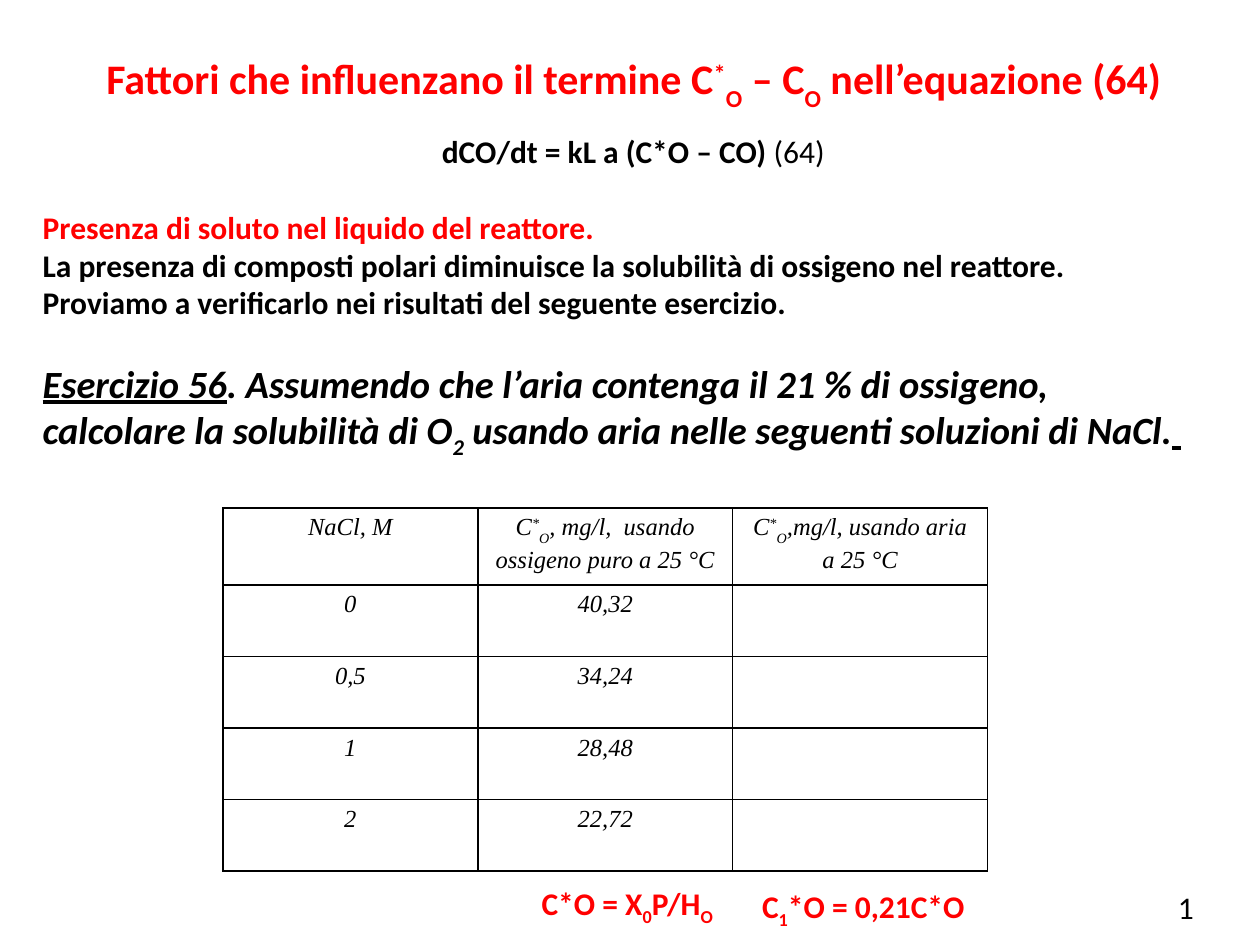
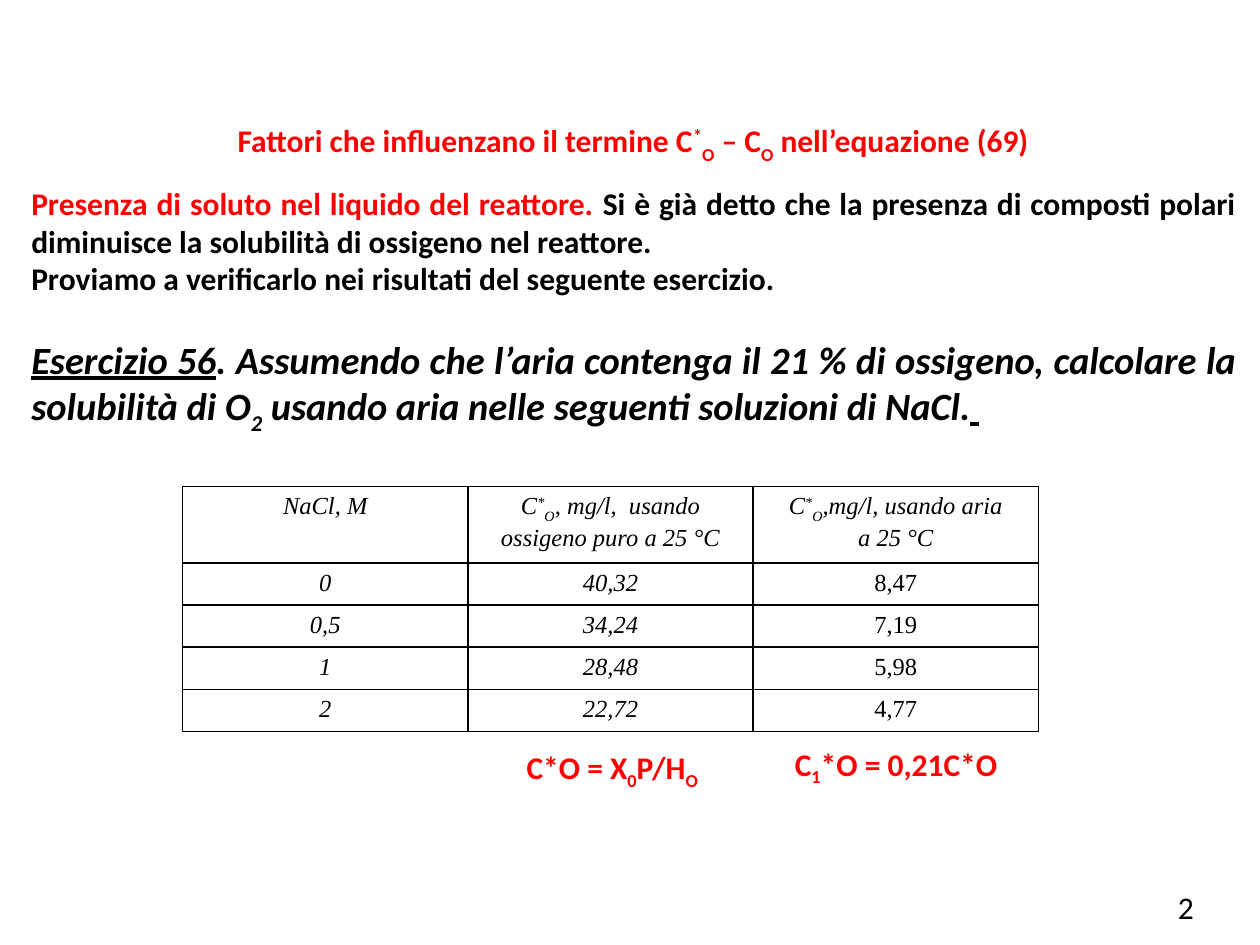
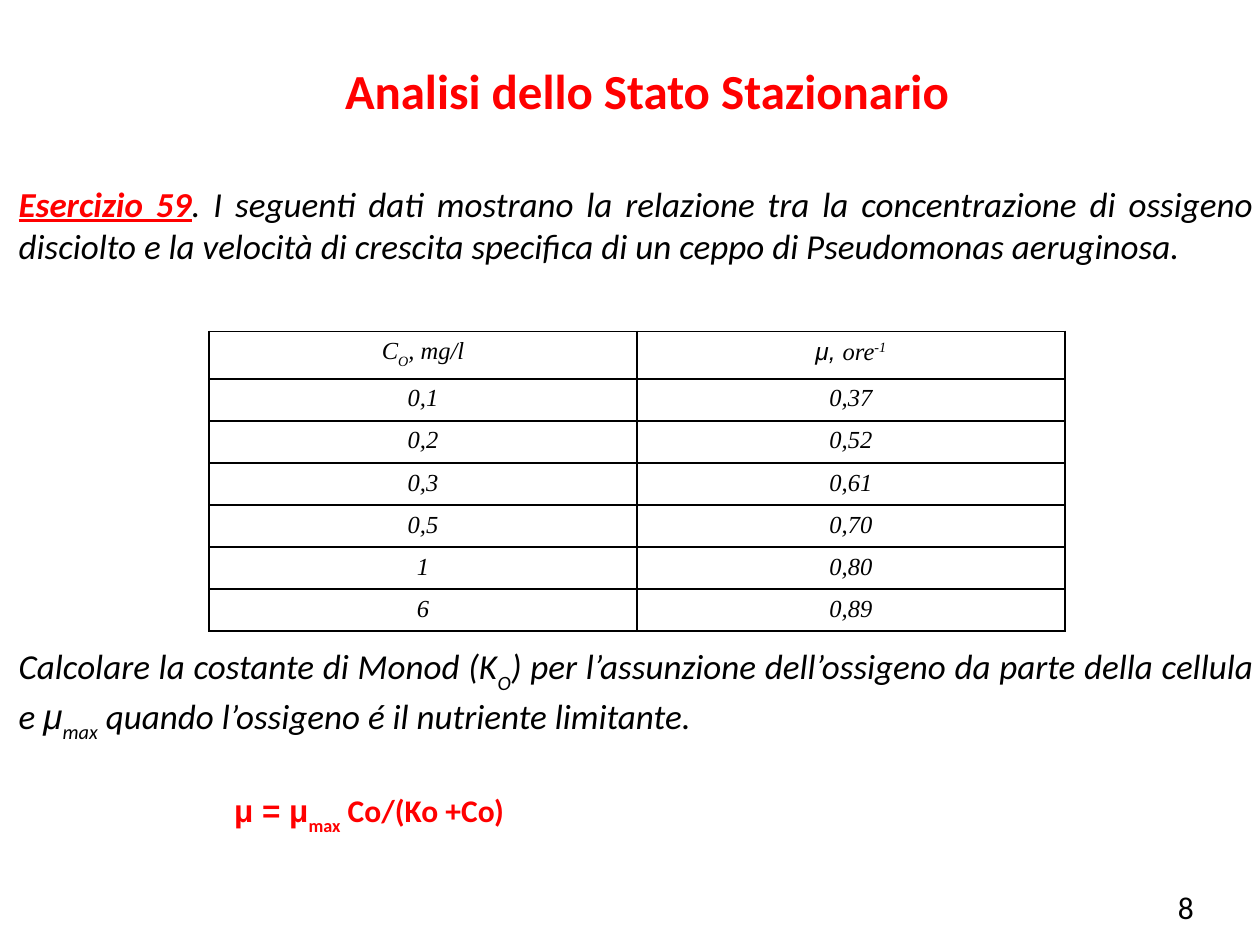
import pptx
import pptx.util
import pptx.dml.color
import pptx.enum.text
import pptx.oxml
import pptx.oxml.ns

Pt = pptx.util.Pt
LEFT = pptx.enum.text.PP_ALIGN.LEFT
CENTER = pptx.enum.text.PP_ALIGN.CENTER
JUSTIFY = pptx.enum.text.PP_ALIGN.JUSTIFY
COLORS = {"text": "000000", "accent": "FF0000", "border": "000000"}
BODY = dict(font="Calibri", size=18, color="text", bold=False, italic=False,
            underline=False, baseline=0)
ACCENT = dict(color="accent", bold=True)
CELL = dict(font="Times New Roman", size=14, italic=True)


def span(text, **style):
    return text, style


def sub(text, depth=30, **style):
    return span(text, baseline=-depth, **style)


def sup(text):
    return span(text, baseline=30)


def as_spans(line):
    """Accept a plain string, one span, or a list of both."""
    parts = line if isinstance(line, list) else [line]
    return [span(part) if isinstance(part, str) else part for part in parts]


class Lesson:
    def __init__(self):
        self.deck = pptx.Presentation()
        self.deck.slide_width, self.deck.slide_height = Pt(720), Pt(540)
        self.page = None

    def new_page(self, number):
        self.page = self.deck.slides.add_slide(self.deck.slide_layouts[6])
        self.text(666, 504, 38, 36, [str(number)])

    def fill_frame(self, frame, lines, align=LEFT, before=None, **style):
        """Fill a frame; before maps a line's index to the space above it."""
        for index, line in enumerate(lines):
            para = frame.paragraphs[0] if index == 0 else frame.add_paragraph()
            para.alignment = align
            para.space_before = Pt((before or {}).get(index, 0))
            for words, own_style in as_spans(line):
                self.add_run(para, words, **{**BODY, **style, **own_style})

    def add_run(self, para, words, font, size, color, bold, italic, underline,
                baseline):
        run = para.add_run()
        run.text = words
        run.font.name, run.font.size = font, Pt(size)
        run.font.bold, run.font.italic = bold, italic
        run.font.underline = underline
        run.font.color.rgb = pptx.dml.color.RGBColor.from_string(COLORS[color])
        if baseline:
            run.font._element.set("baseline", str(baseline * 1000))

    def text(self, left, top, width, height, lines, **style):
        box = self.page.shapes.add_textbox(Pt(left), Pt(top), Pt(width), Pt(height))
        box.text_frame.word_wrap = True
        self.fill_frame(box.text_frame, lines, **style)

    def title(self, left, top, width, line, size):
        self.text(left, top, width, 36, [line], align=CENTER, size=size, **ACCENT)

    def formula(self, left, top, line, width=132.5):
        self.text(left, top, width, 29, [line], **ACCENT)

    def table(self, left, top, width, header_height, row_height, rows):
        """Each cell is a list of lines; an empty list leaves it blank."""
        heights = [header_height] + [row_height] * (len(rows) - 1)
        grid = self.page.shapes.add_table(
            len(rows), len(rows[0]), Pt(left), Pt(top), Pt(width), Pt(sum(heights))).table
        grid.first_row = grid.horz_banding = False
        for column in grid.columns:
            column.width = Pt(width / len(rows[0]))
        for row, height, cells in zip(grid.rows, heights, rows):
            row.height = Pt(height)
            for cell, lines in zip(row.cells, cells):
                self.fill_frame(cell.text_frame, lines, align=CENTER, **CELL)
                self.outline(cell)
                cell.fill.background()

    def outline(self, cell):
        properties = cell._tc.get_or_add_tcPr()
        for side in ("lnL", "lnR", "lnT", "lnB"):
            properties.append(pptx.oxml.parse_xml(
                f'<a:{side} {pptx.oxml.ns.nsdecls("a")} w="{Pt(1)}"><a:solidFill>'
                f'<a:srgbClr val="{COLORS["border"]}"/></a:solidFill></a:{side}>'))


SOLUTE = "Presenza di soluto nel liquido del reattore."
CHECK = "Proviamo a verificarlo nei risultati del seguente esercizio."
EXERCISE = dict(size=22, italic=True)
EXERCISE_NAME = span("Esercizio 56", underline=True, **EXERCISE)
ASSUMPTION = span(". Assumendo che l’aria contenga il 21 % di ossigeno, ", **EXERCISE)
SOLUBILITY = [span("calcolare la solubilità di O", **EXERCISE), sub("2", **EXERCISE),
              span(" usando aria nelle seguenti soluzioni di NaCl.", **EXERCISE),
              span(" ", underline=True, **EXERCISE)]
SATURATION = ["C", sup("*"), sub("O")]
SALT_HEADER = [["NaCl, M"],
               [SATURATION + [", mg/l,  usando ossigeno puro a 25 °C"]],
               [SATURATION + [",mg/l, usando aria"], "a 25 °C"]]
SALT_DATA = [("0", "40,32", "8,47"), ("0,5", "34,24", "7,19"),
             ("1", "28,48", "5,98"), ("2", "22,72", "4,77")]
OXYGEN_FORMULA = ["C*O = X", sub("0", 25), "P/H", sub("O", 25)]
AIR_FORMULA = ["C", sub("1", 25), "*O = 0,21C*O"]
GROWTH_DATA = [("0,1", "0,37"), ("0,2", "0,52"), ("0,3", "0,61"),
               ("0,5", "0,70"), ("1", "0,80"), ("6", "0,89")]


def factors_title(equation):
    return ["Fattori che influenzano il termine C", sup("*"), sub("O"), " – C",
            sub("O"), f" nell’equazione ({equation})"]


def salt_rows(solved):
    return [SALT_HEADER] + [
        [[salt], [oxygen], [span(air, italic=False)] if solved else []]
        for salt, oxygen, air in SALT_DATA]


def question_page(lesson):
    lesson.new_page(1)
    lesson.text(17.3, 115.2, 674, 165, [
        span(SOLUTE, **ACCENT),
        "La presenza di composti polari diminuisce la solubilità di ossigeno nel reattore.",
        CHECK,
        [EXERCISE_NAME, ASSUMPTION],
        SOLUBILITY], align=JUSTIFY, before={3: 22}, bold=True)
    lesson.title(48.2, 26.6, 628, factors_title(64), 24)
    lesson.formula(302.4, 501.8, OXYGEN_FORMULA)
    lesson.formula(428.4, 503.3, AIR_FORMULA)
    lesson.table(127.4, 290.2, 437, 44, 40.9, salt_rows(solved=False))
    lesson.text(52.6, 72, 618.5, 29, [
        [span("dCO/dt = kL a (C*O – CO)", bold=True), " (64)"]], align=CENTER)


def answer_page(lesson):
    lesson.new_page(2)
    lesson.text(10.8, 101.5, 702.7, 165, [
        [span(SOLUTE, **ACCENT), " Si è già detto che la presenza di composti polari "
         "diminuisce la solubilità di ossigeno nel reattore."],
        CHECK,
        [EXERCISE_NAME, ASSUMPTION] + SOLUBILITY],
        align=JUSTIFY, before={2: 22}, bold=True)
    lesson.title(33.8, 65.5, 656, factors_title(69), 18)
    lesson.table(104.4, 277.9, 489, 43.8, 24.05, salt_rows(solved=True))
    lesson.formula(293.8, 424.1, OXYGEN_FORMULA)
    lesson.formula(447.1, 421.9, AIR_FORMULA)


def steady_state_page(lesson):
    lesson.new_page(8)
    prose = dict(align=JUSTIFY, size=20, italic=True)
    lesson.text(3.6, 100.5, 720, 56, [
        [span("Esercizio 59", underline=True, **ACCENT),
         ". I seguenti dati mostrano la relazione tra la concentrazione di ossigeno "
         "disciolto e la velocità di crescita specifica di un ceppo di "
         "Pseudomonas aeruginosa."]], **prose)
    lesson.text(3.6, 365, 720, 62, [
        ["Calcolare la costante di Monod (K", sub("O"),
         ") per l’assunzione dell’ossigeno da parte della cellula e ",
         span("μ", font="Arial"), sub("max"),
         " quando l’ossigeno é il nutriente limitante."]], **prose)
    lesson.title(181.4, 31, 376.6, "Analisi dello Stato Stazionario", 28)
    header = [[["C", sub("O"), ", mg/l"]],
              [[span("μ, ", font="Arial"), "ore", sup("-1")]]]
    lesson.table(119.5, 189.4, 489, 26.9, 24.05, [header] + [
        [[oxygen], [rate]] for oxygen, rate in GROWTH_DATA])
    lesson.formula(126.7, 448.6, [span("μ = μ", font="Arial"), sub("max"),
                                  " Co/(Ko +Co)"], width=365)


def main():
    lesson = Lesson()
    question_page(lesson)
    answer_page(lesson)
    steady_state_page(lesson)
    lesson.deck.save("out.pptx")


if __name__ == "__main__":
    main()
